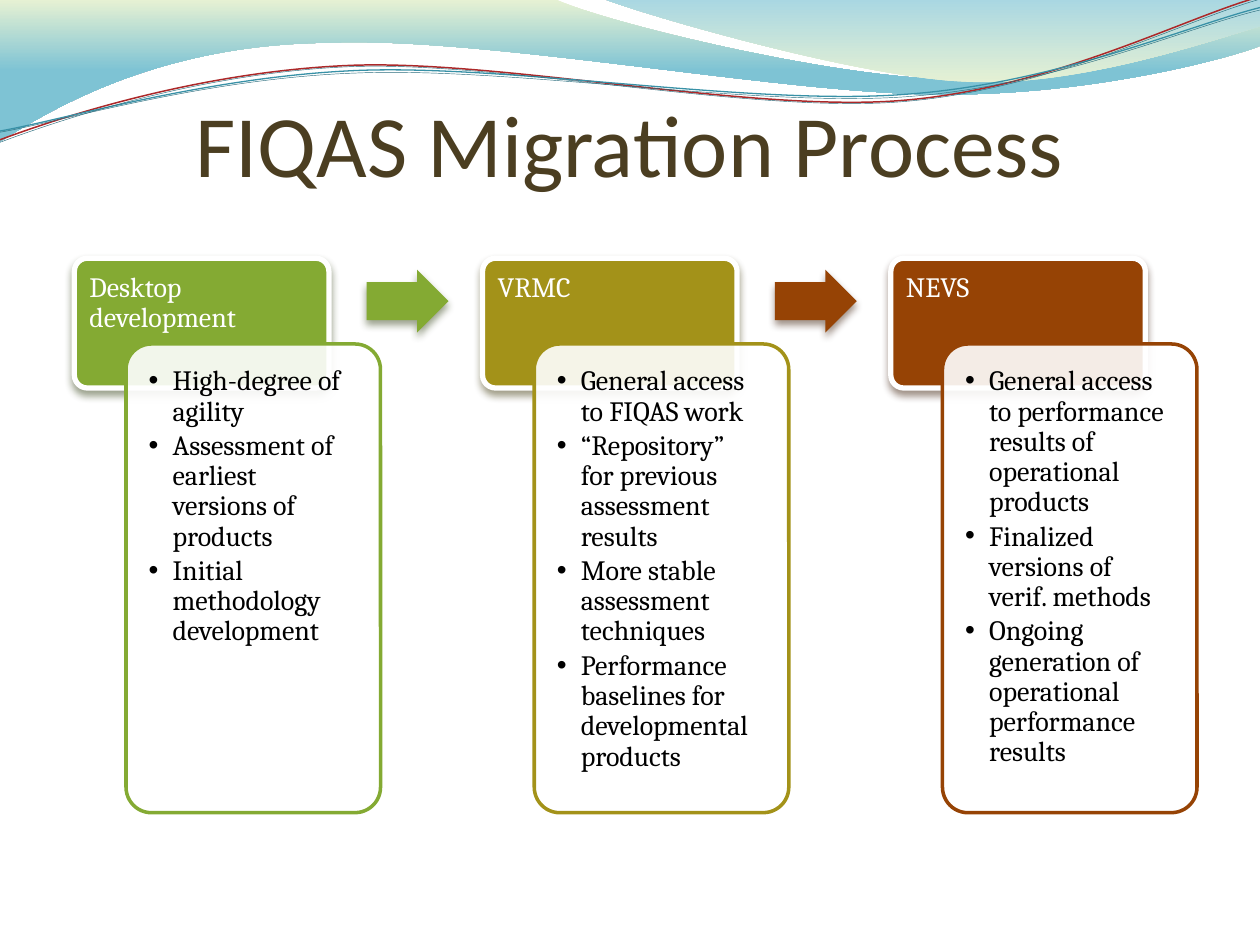
from dataclasses import dataclass
from lxml.etree import SubElement
from pptx import Presentation
from pptx.dml.color import RGBColor
from pptx.enum.shapes import MSO_SHAPE
from pptx.enum.text import MSO_ANCHOR, MSO_AUTO_SIZE, PP_ALIGN
from pptx.oxml.ns import qn
from pptx.util import Pt

PX = 9144  # EMU in one px, 100 px to the inch

WHITE = RGBColor(0xFF, 0xFF, 0xFF)
BLACK = RGBColor(0, 0, 0)
BROWN = RGBColor(0x4B, 0x3E, 0x21)
CREAM = RGBColor(0xE8, 0xF2, 0xD3)
AQUA = RGBColor(0x7E, 0xC3, 0xD4)
SKY = RGBColor(0xA9, 0xD7, 0xE2)
RED = RGBColor(0xAC, 0x28, 0x29)
TEAL = RGBColor(0x38, 0x91, 0xA7)
DEEP = RGBColor(0x2A, 0x6D, 0x7D)
GREEN = RGBColor(0x84, 0xAA, 0x33)
OLIVE = RGBColor(0xA3, 0x92, 0x19)
RUST = RGBColor(0x96, 0x43, 0x05)
MOSS = RGBColor(0x2F, 0x3D, 0x11)
COCOA = RGBColor(0x36, 0x17, 0x00)
UMBER = RGBColor(0x3B, 0x34, 0x07)


@dataclass
class Band:
    start: tuple
    steps: list  # a pair is a straight line, six numbers a Bezier curve
    stops: list
    angle: int


@dataclass
class Wave:
    start: tuple
    steps: list
    color: RGBColor
    width: float


@dataclass
class Stage:
    name: str
    color: RGBColor
    shade: RGBColor
    items: list


BANDS = [
    Band((0, 0), [(440, -1), (476, 17, 664, 63, 758, 63), (853, 63, 958, 26, 1000, 9),
                  (1001, 36), (983, 44, 870, 76, 746, 75), (622, 75, 382, 28, 257, 34),
                  (129, 36, 46, 83, -1, 113)], [(0, CREAM), (0.5, AQUA)], 270),
    Band((479, -1), [(509, 11, 682, 62, 769, 65), (856, 69, 961, 32, 1000, 21),
                     (1000, 0)], [(0, CREAM), (1, SKY)], 90),
]
WAVES = [
    Wave((0, 111), [(48, 93, 158, 57, 277, 52), (395, 47, 593, 89, 713, 80),
                    (833, 71, 938, 15, 998, -2)], RED, 0.85),
    Wave((0, 104), [(47, 96, 164, 61, 283, 56), (403, 51, 597, 84, 717, 75),
                    (836, 67, 941, 21, 1000, 6)], TEAL, 0.75),
    Wave((0, 113), [(48, 95, 158, 58, 277, 53), (395, 48, 593, 90, 713, 81),
                    (833, 72, 938, 17, 998, 0)], DEEP, 0.25),
    Wave((0, 105), [(47, 97, 164, 62, 283, 58), (403, 53, 597, 85, 717, 77),
                    (836, 69, 941, 22, 1000, 8)], DEEP, 0.25),
]
STAGES = [
    Stage("Desktop development", GREEN, MOSS,
          ["High-degree of agility", "Assessment of earliest versions of products",
           "Initial methodology development"]),
    Stage("VRMC", OLIVE, UMBER,
          ["General access to FIQAS work", "“Repository” for previous assessment results",
           "More stable assessment techniques",
           "Performance baselines for developmental products"]),
    Stage("NEVS", RUST, COCOA,
          ["General access to performance results of operational products",
           "Finalized versions of verif. methods",
           "Ongoing generation of operational performance results"]),
]
LEFT, PITCH = 59, 324


def draw_path(slide, part, close: bool):
    """Build the outline through all knots, then join each three into a curve."""
    knots = [(x * PX, y * PX) for step in part.steps
             for x, y in zip(step[::2], step[1::2])]
    pen = slide.shapes.build_freeform(*(v * PX for v in part.start))
    pen.add_line_segments(knots, close=close)
    shape = pen.convert_to_shape()
    shape.shadow.inherit = False
    path = shape.element.spPr.find(f".//{qn('a:path')}")
    lines = iter(path.findall(qn("a:lnTo")))
    for step in part.steps:
        group = [next(lines) for _ in step[::2]]
        if len(group) == 3:
            curve = path.makeelement(qn("a:cubicBezTo"))
            group[0].addprevious(curve)
            for line in group:
                curve.append(line[0])
                path.remove(line)
    return shape


def draw_band(slide, band: Band) -> None:
    shape = draw_path(slide, band, True)
    shape.line.fill.background()
    shape.fill.gradient()
    shape.fill.gradient_angle = band.angle
    for stop, (place, color) in zip(shape.fill.gradient_stops, band.stops):
        stop.position = place
        stop.color.rgb = color


def draw_wave(slide, wave: Wave) -> None:
    shape = draw_path(slide, wave, False)
    shape.fill.background()
    shape.line.color.rgb = wave.color
    shape.line.width = Pt(wave.width)


def place(shape, x: int, y: int, w: int, h: int) -> None:
    shape.left, shape.top, shape.width, shape.height = (v * PX for v in (x, y, w, h))


def add_block(slide, kind, box: tuple, fill, edge=None, width=0, adjust=(0.1,)):
    shape = slide.shapes.add_shape(kind, *(v * PX for v in box))
    for i, value in enumerate(adjust):
        shape.adjustments[i] = value
    shape.fill.solid()
    shape.fill.fore_color.rgb = fill
    if edge is None:
        shape.line.fill.background()
    else:
        shape.line.color.rgb = edge
        shape.line.width = Pt(width)
    shape.shadow.inherit = False
    return shape


def add_alpha(color, percent: int) -> None:
    SubElement(color, qn("a:alpha"), val=str(percent * 1000))


def cast_shadow(shape, color: RGBColor) -> None:
    effects = shape.element.spPr.find(qn("a:effectLst"))
    outer = SubElement(effects, qn("a:outerShdw"), blurRad=str(Pt(4.5)),
                       dist=str(Pt(3)), dir="5400000", rotWithShape="0")
    add_alpha(SubElement(outer, qn("a:srgbClr"), val=str(color)), 48)


def set_frame(frame, insets: tuple, anchor=MSO_ANCHOR.TOP) -> None:
    frame.word_wrap = True
    frame.auto_size = MSO_AUTO_SIZE.NONE
    frame.vertical_anchor = anchor
    (frame.margin_left, frame.margin_top,
     frame.margin_right, frame.margin_bottom) = (v * PX for v in insets)


def add_text(para, text: str, size: int, face: str, color: RGBColor) -> None:
    run = para.add_run()
    run.text = text
    run.font.size, run.font.name, run.font.bold = Pt(size), face, False
    run.font.color.rgb = color


def fill_list(holder, items: list) -> None:
    frame = holder.text_frame
    set_frame(frame, (12, 12, 14, 12))
    for i, item in enumerate(items):
        para = frame.add_paragraph() if i else frame.paragraphs[0]
        para.alignment = PP_ALIGN.LEFT
        para.line_spacing, para.space_before, para.space_after = 0.9, Pt(0), Pt(2.4)
        props = para._p.get_or_add_pPr()
        props.set("marL", str(19 * PX))
        props.set("indent", str(-19 * PX))
        SubElement(props, qn("a:buChar"), char="•")
        add_text(para, item, 16, "Cambria", BLACK)


def draw_stage(slide, stage: Stage, x: int, holder) -> None:
    head = add_block(slide, MSO_SHAPE.ROUNDED_RECTANGLE, (x, 205, 202, 103),
                     stage.color, WHITE, 3)
    cast_shadow(head, stage.shade)
    label = slide.shapes.add_textbox(*(v * PX for v in (x, 205, 202, 68)))
    set_frame(label.text_frame, (12, 12, 12, 7))
    para = label.text_frame.paragraphs[0]
    para.line_spacing = 0.9
    add_text(para, stage.name, 16, "Cambria", WHITE)
    card = add_block(slide, MSO_SHAPE.ROUNDED_RECTANGLE, (x + 41, 273, 202, 372),
                     WHITE, stage.color, 2)
    add_alpha(card.element.spPr.find(f".//{qn('a:srgbClr')}"), 90)
    place(holder, x + 47, 279, 190, 360)
    fill_list(holder, stage.items)
    card.element.addnext(holder.element)


def draw_arrow(slide, stage: Stage, x: int) -> None:
    arrow = add_block(slide, MSO_SHAPE.RIGHT_ARROW, (x, 214, 65, 50), stage.color,
                      adjust=(0.6, 0.5))
    cast_shadow(arrow, stage.shade)


def main() -> None:
    deck = Presentation()
    deck.slide_width, deck.slide_height = 1000 * PX, 750 * PX
    slide = deck.slides.add_slide(deck.slide_layouts[4])
    title, *bodies = slide.placeholders
    for band in BANDS:
        draw_band(slide, band)
    for wave in WAVES:
        draw_wave(slide, wave)

    place(title, 50, 67, 900, 108)
    set_frame(title.text_frame, (0, 0, 0, 15), MSO_ANCHOR.MIDDLE)
    para = title.text_frame.paragraphs[0]
    para.alignment = PP_ALIGN.CENTER
    add_text(para, "FIQAS Migration Process", 50, "Calibri", BROWN)
    slide.shapes[-1].element.addnext(title.element)

    for i, (stage, holder) in enumerate(zip(STAGES, bodies)):
        x = LEFT + i * PITCH
        if i:
            # The first arrow is green, the second takes the color of its target
            draw_arrow(slide, STAGES[0] if i == 1 else stage, x - 92)
        draw_stage(slide, stage, x, holder)
    for spare in bodies[len(STAGES):]:
        spare.element.getparent().remove(spare.element)
    deck.save("out.pptx")


if __name__ == "__main__":
    main()
